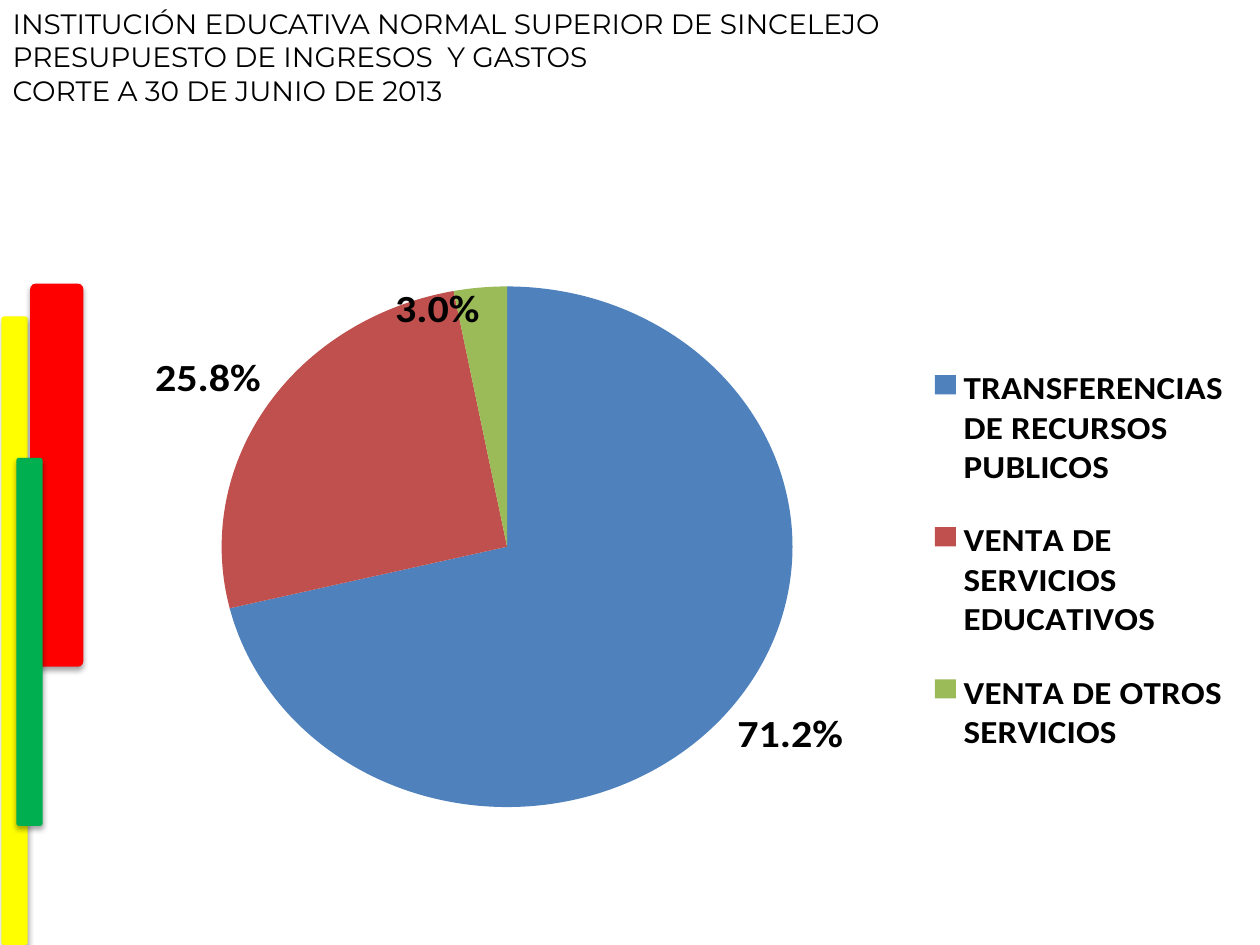
from lxml.etree import SubElement
from pptx import Presentation
from pptx.chart.data import CategoryChartData
from pptx.dml.color import RGBColor
from pptx.enum.chart import XL_CHART_TYPE as Kind
from pptx.enum.chart import XL_LABEL_POSITION as Spot
from pptx.enum.chart import XL_LEGEND_POSITION as Side
from pptx.enum.shapes import MSO_SHAPE as Form
from pptx.enum.text import MSO_ANCHOR as Anchor
from pptx.enum.text import PP_ALIGN as Align
from pptx.oxml import parse_xml
from pptx.oxml.ns import nsdecls, qn
from pptx.util import Cm, Pt

BLACK = RGBColor(0x00, 0x00, 0x00)
YELLOW = RGBColor(0xFF, 0xFF, 0x00)
RED = RGBColor(0xFF, 0x00, 0x00)
GREEN = RGBColor(0x00, 0xB0, 0x50)
SLICES = (RGBColor(0x4F, 0x81, 0xBD), RGBColor(0xC0, 0x50, 0x4D),
          RGBColor(0x9B, 0xBB, 0x59))

HEADING = (
    "INSTITUCIÓN EDUCATIVA NORMAL SUPERIOR DE SINCELEJO",
    "PRESUPUESTO DE INGRESOS  Y GASTOS",
    "CORTE A 30 DE JUNIO DE 2013",
)
INCOME = {
    "TRANSFERENCIAS DE RECURSOS PUBLICOS": 0.712,
    "VENTA DE SERVICIOS EDUCATIVOS": 0.258,
    "VENTA DE OTROS SERVICIOS": 0.03,
}
# Left, top, width and height in cm within the flag, then the colour
BARS = (
    (0, 0.66, 0.53, 12.67, YELLOW),
    (0.58, 0, 1.07, 7.72, RED),
    (0.3, 3.51, 0.53, 7.42, GREEN),
)


def add_heading(slide, left, top, width, height):
    title = slide.shapes.title
    title.left, title.top, title.width, title.height = left, top, width, height
    frame = title.text_frame
    frame.word_wrap = True
    frame.vertical_anchor = Anchor.TOP
    frame.text = "\n".join(HEADING)
    for line in frame.paragraphs:
        line.alignment = Align.LEFT
        line.font.name = "Montserrat"
        line.font.size = Pt(16)
        line.font.color.rgb = BLACK


def add_shadow(shape):
    """Give the shape a soft shadow straight below it."""
    shape.shadow.inherit = False
    effects = shape._element.spPr.find(qn("a:effectLst"))
    effects.append(parse_xml(
        f'<a:outerShdw {nsdecls("a")} blurRad="{Pt(3.1)}" dist="{Pt(1.8)}" '
        'dir="5400000" rotWithShape="0"><a:srgbClr val="000000">'
        '<a:alpha val="35000"/></a:srgbClr></a:outerShdw>'))


def add_flag(slide, left, top):
    group = slide.shapes.add_group_shape()
    for x, y, width, height, color in BARS:
        bar = group.shapes.add_shape(
            Form.ROUNDED_RECTANGLE, left + Cm(x), top + Cm(y),
            Cm(width), Cm(height))
        bar.adjustments[0] = 0.1
        bar.fill.solid()
        bar.fill.fore_color.rgb = color
        bar.line.fill.background()
        add_shadow(bar)


def set_layout(owner, after, inner=False, **box):
    """Fix the box of a chart part, in fractions of the whole chart."""
    for old in owner.findall(qn("c:layout")):
        owner.remove(old)
    layout = parse_xml(f'<c:layout {nsdecls("c")}/>')
    manual = SubElement(layout, qn("c:manualLayout"))
    if inner:
        SubElement(manual, qn("c:layoutTarget"), val="inner")
    for mode in ("xMode", "yMode"):
        SubElement(manual, qn(f"c:{mode}"), val="edge")
    for key, value in box.items():
        SubElement(manual, qn(f"c:{key}"), val=str(value))
    if after is None:
        owner.insert(0, layout)
    else:
        after.addnext(layout)


def add_pie(slide, left, top, width, height):
    data = CategoryChartData(number_format="0.0%")
    data.categories = list(INCOME)
    data.add_series("Series 1", list(INCOME.values()))
    chart = slide.shapes.add_chart(
        Kind.PIE, left, top, width, height, data).chart
    chart.has_title = False
    chart.font.name = "Calibri"
    chart.font.size = Pt(10)
    chart.font.color.rgb = BLACK

    plot = chart.plots[0]
    plot.vary_by_categories = True
    series = plot.series[0]
    for i, color in enumerate(SLICES):
        fill = series.points[i].format.fill
        fill.solid()
        fill.fore_color.rgb = color

    labels = series.data_labels
    labels.show_value = True
    labels.show_percentage = False
    labels.number_format = "0.0%"
    labels.number_format_is_linked = False
    labels.position = Spot.OUTSIDE_END

    chart.has_legend = True
    legend = chart.legend
    legend.position = Side.RIGHT
    legend.include_in_layout = False
    for font, size in ((labels.font, 24), (legend.font, 20)):
        font.name = "Calibri"
        font.size = Pt(size)
        font.bold = True
        font.color.rgb = BLACK

    area = chart._chartSpace.chart.plotArea
    set_layout(area, None, inner=True, x=0, y=0, w=0.7, h=0.96)
    key = legend._element
    set_layout(key, key.find(qn("c:legendPos")), x=0.72, y=0.09, w=0.28, h=0.83)


def main():
    deck = Presentation()
    deck.slide_width, deck.slide_height = Cm(25.4), Cm(19.05)
    slide = deck.slides.add_slide(deck.slide_layouts[5])
    add_flag(slide, Cm(0.03), Cm(5.72))
    add_heading(slide, 0, 0, deck.slide_width, Cm(2.39))
    add_pie(slide, Cm(2.31), Cm(4.72), Cm(22.61), Cm(11.99))
    deck.save("out.pptx")


if __name__ == "__main__":
    main()
